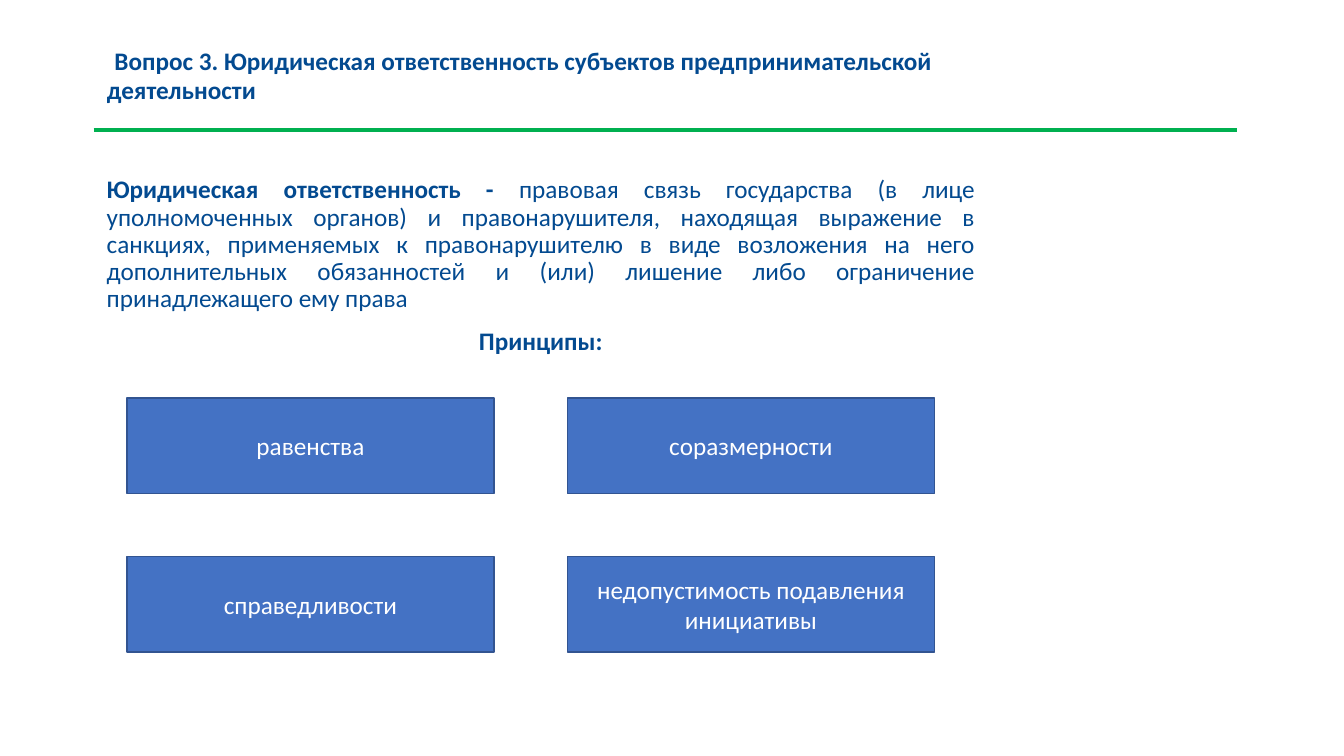
from dataclasses import dataclass

import pptx
import pptx.dml.color
import pptx.enum.shapes
import pptx.enum.text
import pptx.oxml.ns
import pptx.util
from lxml import etree

Cm, Pt = pptx.util.Cm, pptx.util.Pt
Align = pptx.enum.text.PP_ALIGN
Anchor = pptx.enum.text.MSO_ANCHOR

# Content
TITLE = "Вопрос 3. Юридическая ответственность субъектов предпринимательской деятельности"
TERM = "Юридическая ответственность - "
DEFINITION = (
    "правовая связь государства (в лице уполномоченных органов) и правонарушителя, "
    "находящая выражение в санкциях, применяемых к правонарушителю в виде возложения "
    "на него дополнительных обязанностей и (или) лишение либо ограничение "
    "принадлежащего ему права"
)
PRINCIPLES_HEADING = "Принципы:"
PRINCIPLES = [
    ["равенства", "соразмерности"],
    ["справедливости", "недопустимость подавления инициативы"],
]


@dataclass(frozen=True)
class Theme:
    font: str = "Calibri"
    size: float = 18
    text: str = "034A90"
    rule: str = "00B050"
    card: str = "4472C4"
    card_line: str = "325491"
    card_text: str = "FFFFFF"


THEME = Theme()

# Layout in centimetres
TEXT_LEFT, TEXT_WIDTH = 2.44, 22.38
CARD_LEFT, CARD_TOP, CARD_WIDTH, CARD_HEIGHT = 3.2, 10.03, 9.25, 2.41
COLUMN_STEP, ROW_STEP = 11.1, 3.99


def rgb(value):
    return pptx.dml.color.RGBColor.from_string(value)


def style(para, align, color, bold=None, spacing=None):
    para.alignment = align
    para.line_spacing = spacing
    para.font.name = THEME.font
    para.font.size = Pt(THEME.size)
    para.font.color.rgb = rgb(color)
    para.font.bold = bold


def set_frame(frame, anchor):
    frame.word_wrap = True
    frame.auto_size = pptx.enum.text.MSO_AUTO_SIZE.NONE
    frame.vertical_anchor = anchor


def add_title(page):
    title = page.shapes.title
    title.left, title.top = Cm(TEXT_LEFT), Cm(1.07)
    title.width, title.height = Cm(TEXT_WIDTH), Cm(1.9)
    set_frame(title.text_frame, Anchor.TOP)
    para = title.text_frame.paragraphs[0]
    para.text = TITLE
    style(para, Align.LEFT, THEME.text, bold=True, spacing=0.95)
    # First-line indent
    para._p.get_or_add_pPr().set("indent", str(Cm(0.19)))


def add_rule(page):
    rule = page.shapes.add_connector(
        pptx.enum.shapes.MSO_CONNECTOR.STRAIGHT, Cm(2.36), Cm(3.28), Cm(31.17), Cm(3.28)
    )
    rule.line.color.rgb = rgb(THEME.rule)
    rule.line.width = Pt(3)
    etree.SubElement(rule._element.spPr, pptx.oxml.ns.qn("a:effectLst"))


def add_definition(page):
    box = page.shapes.add_textbox(Cm(TEXT_LEFT), Cm(4.34), Cm(TEXT_WIDTH), Cm(5))
    set_frame(box.text_frame, Anchor.TOP)
    para = box.text_frame.paragraphs[0]
    style(para, Align.JUSTIFY, THEME.text, spacing=0.9)
    para.space_after = Pt(6)
    for text, bold in ((TERM, True), (DEFINITION, False)):
        span = para.add_run()
        span.text = text
        span.font.bold = bold

    heading = box.text_frame.add_paragraph()
    heading.text = PRINCIPLES_HEADING
    style(heading, Align.CENTER, THEME.text, bold=True, spacing=0.9)
    heading.space_before = Pt(4.8)


def add_card(page, text, left, top):
    card = page.shapes.add_shape(
        pptx.enum.shapes.MSO_SHAPE.RECTANGLE,
        Cm(left), Cm(top), Cm(CARD_WIDTH), Cm(CARD_HEIGHT),
    )
    card.shadow.inherit = False
    card.fill.solid()
    card.fill.fore_color.rgb = rgb(THEME.card)
    card.line.color.rgb = rgb(THEME.card_line)
    card.line.width = Pt(1)
    set_frame(card.text_frame, Anchor.MIDDLE)
    para = card.text_frame.paragraphs[0]
    para.text = text
    style(para, Align.CENTER, THEME.card_text)


def main():
    deck = pptx.Presentation()
    deck.slide_width, deck.slide_height = Cm(33.87), Cm(19.05)
    page = deck.slides.add_slide(deck.slide_layouts.get_by_name("Title Only"))

    # Heading and definition
    add_rule(page)
    add_title(page)
    add_definition(page)

    # Grid of principles
    for row, names in enumerate(PRINCIPLES):
        for column, name in enumerate(names):
            add_card(page, name, CARD_LEFT + column * COLUMN_STEP, CARD_TOP + row * ROW_STEP)

    deck.save("out.pptx")


if __name__ == "__main__":
    main()
